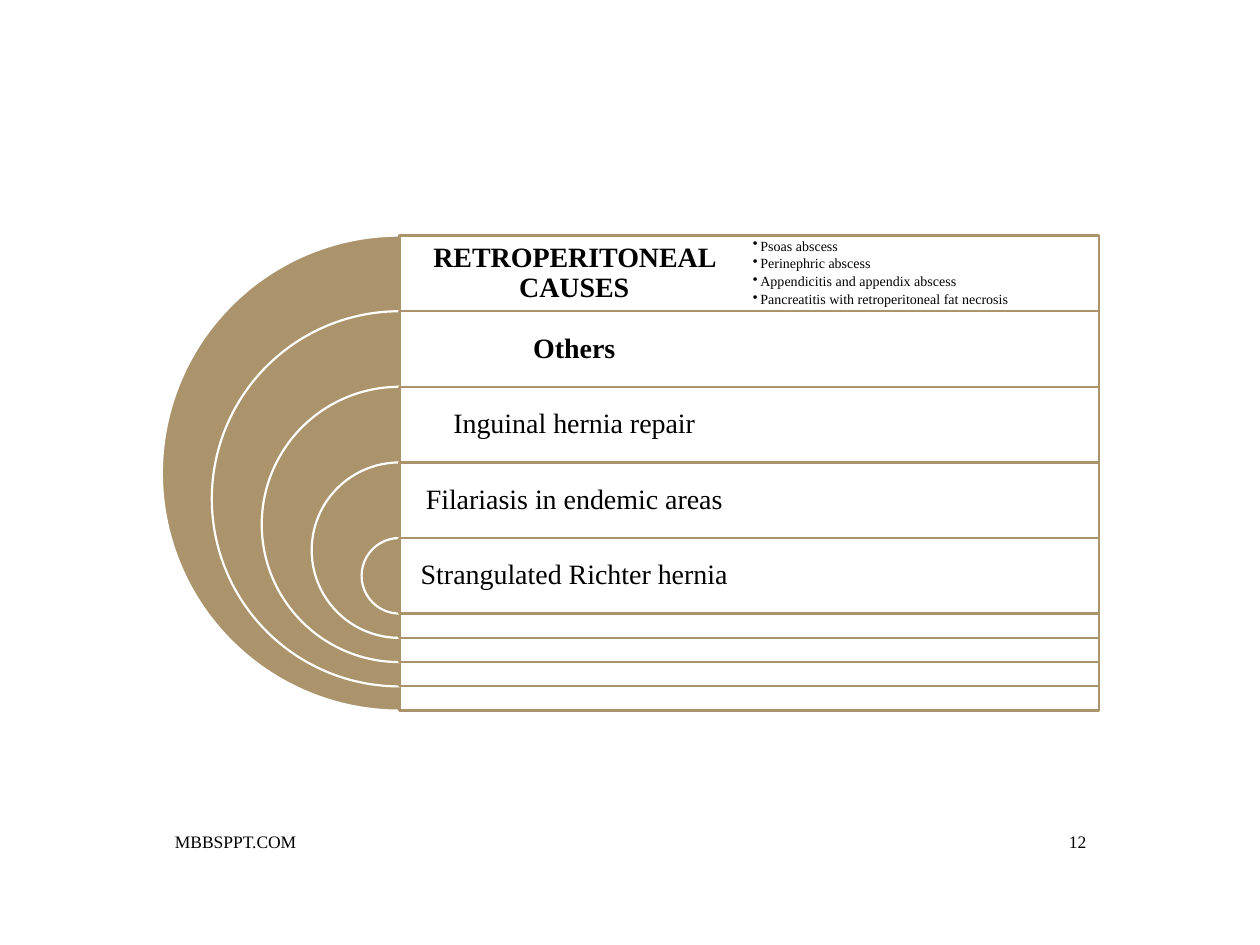
from pptx import Presentation
from pptx.dml.color import RGBColor
from pptx.enum.shapes import MSO_SHAPE as Shape
from pptx.enum.text import MSO_ANCHOR as Anchor, PP_ALIGN as Align
from pptx.oxml.ns import qn
from pptx.util import Inches, Pt
from lxml import etree

THEME = {
    "font": "Times New Roman",
    "text": RGBColor(0x00, 0x00, 0x00),
    "tan": RGBColor(0xAB, 0x94, 0x6B),
    "white": RGBColor(0xFF, 0xFF, 0xFF),
    "label": Pt(16),
    "list": Pt(8),
    "footer": Pt(10),
    "line": Pt(1.25),
}


def add_text(left, top, width, height, lines, size, bold=False,
             align=Align.LEFT, inset=(0.1, 0.05), spacing=1, gap=0, bullet=False):
    box = page.shapes.add_textbox(*map(Inches, (left, top, width, height)))
    frame = box.text_frame
    side, edge = map(Inches, inset)
    settings = {"word_wrap": True, "vertical_anchor": Anchor.MIDDLE,
                "margin_left": side, "margin_right": side,
                "margin_top": edge, "margin_bottom": edge}
    for name, value in settings.items():
        setattr(frame, name, value)
    for index, line in enumerate(lines):
        para = frame.paragraphs[0] if index == 0 else frame.add_paragraph()
        para.alignment, para.line_spacing = align, spacing
        para.space_after = Pt(gap)
        if bullet:
            props = para._p.get_or_add_pPr()
            props.set("marL", str(Inches(0.06)))
            props.set("indent", str(-Inches(0.06)))
            etree.SubElement(props, qn("a:buChar")).set("char", "•")
        span = para.add_run()
        span.text = line
        font = {"name": THEME["font"], "size": size, "bold": bold}
        for name, value in font.items():
            setattr(span.font, name, value)
        span.font.color.rgb = THEME["text"]


def add_block(kind, left, top, width, height, fill, line):
    block = page.shapes.add_shape(kind, *map(Inches, (left, top, width, height)))
    block.shadow.inherit = False
    block.fill.solid()
    block.fill.fore_color.rgb = fill
    block.line.color.rgb = line
    block.line.width = THEME["line"]
    return block


deck = Presentation()
deck.slide_width, deck.slide_height = Inches(10), Inches(7.5)
page = deck.slides.add_slide(deck.slide_layouts[6])

# Footer and page number
add_text(1.29, 6.52, 5.58, 0.31, ["MBBSPPT.COM"], THEME["footer"])
add_text(8.29, 6.52, 0.43, 0.31, ["12"], THEME["footer"], align=Align.RIGHT)

# Nested half circles, each with a panel and a label in its top row
CENTER, TOP, PANEL_WIDTH = 3.17, 1.87, 5.55
LABEL_WIDTH = PANEL_WIDTH / 2
OUTER, INNER = 3.77, 0.6
labels = [
    ("RETROPERITONEAL CAUSES", True),
    ("Others", True),
    ("Inguinal hernia repair", False),
    ("Filariasis in endemic areas", False),
    ("Strangulated Richter hernia", False),
]
shrink = (OUTER - INNER) / (len(labels) - 1)
for row, (label, bold) in enumerate(labels):
    top = TOP + row * INNER
    size = OUTER - row * shrink
    pie = add_block(Shape.PIE, CENTER - size / 2, top, size, size,
                    THEME["tan"], THEME["white"])
    pie.adjustments[0], pie.adjustments[1] = 54, 162
    panel = add_block(Shape.RECTANGLE, CENTER, top, PANEL_WIDTH, size,
                      THEME["white"], THEME["tan"])
    color = panel.fill._xPr.find(qn("a:solidFill"))[0]
    etree.SubElement(color, qn("a:alpha")).set("val", "90000")
    add_text(CENTER, top, LABEL_WIDTH, INNER, [label], THEME["label"], bold,
             Align.CENTER, (0.07, 0.07), 0.9)

# Causes listed beside the first label
causes = ["Psoas abscess", "Perinephric abscess",
          "Appendicitis and appendix abscess",
          "Pancreatitis with retroperitoneal fat necrosis"]
add_text(CENTER + LABEL_WIDTH, TOP, LABEL_WIDTH, INNER, causes, THEME["list"],
         inset=(0.03, 0.03), spacing=0.9, gap=1.6, bullet=True)

deck.save("out.pptx")
